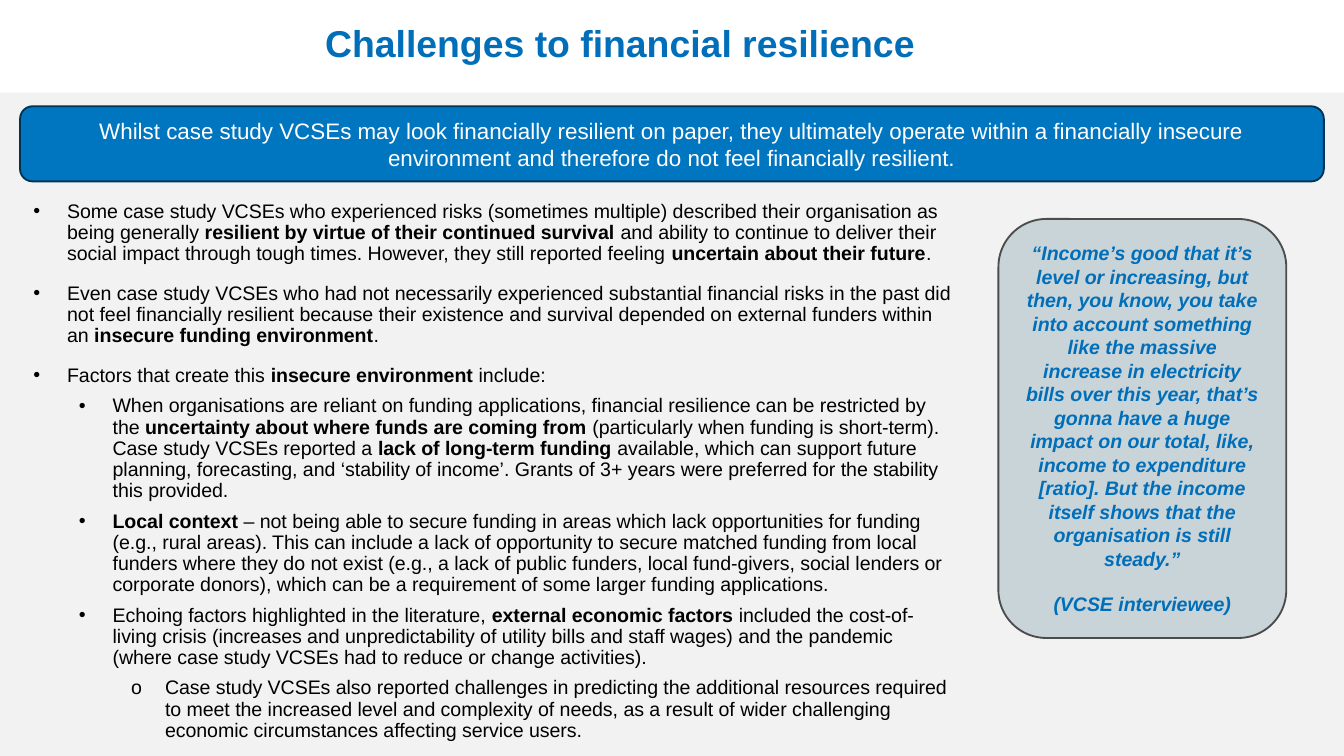
from pptx import Presentation
from pptx.util import Cm, Pt
from pptx.dml.color import RGBColor
from pptx.enum import shapes, text
from pptx.oxml.ns import qn
from lxml import etree

# Content: ** switches bold on and off
TITLE = "Challenges to financial resilience"
BANNER = ("Whilst case study VCSEs may look financially resilient on paper, they ultimately operate "
          "within a financially insecure environment and therefore do not feel financially resilient.")
POINTS = [  # level, text
    (0, "Some case study VCSEs who experienced risks (sometimes multiple) described their organisation "
        "as being generally **resilient by virtue of their continued survival **and ability to continue "
        "to deliver their social impact through tough times. However, they still reported feeling "
        "**uncertain about their future**."),
    (0, "Even case study VCSEs who had not necessarily experienced substantial financial risks in the "
        "past did not feel financially resilient because their existence and survival depended on "
        "external funders within an **insecure funding environment**."),
    (0, "Factors that create this **insecure environment **include:"),
    (1, "When organisations are reliant on funding applications, financial resilience can be restricted "
        "by the **uncertainty about where funds are coming from **(particularly when funding is "
        "short-term). Case study VCSEs reported a **lack of long-term funding **available, which can "
        "support future planning, forecasting, and ‘stability of income’. Grants of 3+ years were "
        "preferred for the stability this provided."),
    (1, "**Local context **– not being able to secure funding in areas which lack opportunities for "
        "funding (e.g., rural areas). This can include a lack of opportunity to secure matched funding "
        "from local funders where they do not exist (e.g., a lack of public funders, local fund-givers, "
        "social lenders or corporate donors), which can be a requirement of some larger funding "
        "applications."),
    (1, "Echoing factors highlighted in the literature, **external economic factors **included the "
        "cost-of-living crisis (increases and unpredictability of utility bills and staff wages) and "
        "the pandemic (where case study VCSEs had to reduce or change activities)."),
    (2, "Case study VCSEs also reported challenges in predicting the additional resources required to "
        "meet the increased level and complexity of needs, as a result of wider challenging economic "
        "circumstances affecting service users."),
]
QUOTE = [
    "“Income’s good that it’s level or increasing, but then, you know, you take into account something "
    "like the massive increase in electricity bills over this year, that’s gonna have a huge impact on "
    "our total, like, income to expenditure [ratio]. But the income itself shows that the organisation "
    "is still steady.”",
    "(VCSE interviewee)",
]

THEME = {
    "font": "Arial",
    "panel": "F2F2F2", "banner": "0076C0", "edge": "003454",
    "card": "C9D4D9", "rim": "4C4C4C",
    "blue": "006EB8", "white": "FFFFFF", "black": "000000",
    "title": 20, "lead": 12, "body": 10.5,
}
LEVELS = [  # indent in cm, space before in pt, bullet
    (0.64, 10, "•"), (1.5, 5, "•"), (2.49, 5, "o"),
]
HANG = 0.64
WIDE, HIGH = 25.4, 14.29
TOP = 1.75   # where the grey panel starts
EDGE = 0.38  # side margin
PLACES = {  # left, top, width, height in cm
    "panel": (0, TOP, WIDE, HIGH - TOP),
    "title": (5.89, 0.15, 19.51, 1.42),
    "banner": (EDGE, 2.01, WIDE - 2 * EDGE, 1.42),
    "body": (EDGE, 3.68, 17.93, 10.46),
    "card": (18.87, 4.14, 5.44, 7.92),
}


def color(name):
    return RGBColor.from_string(THEME[name])


def put(obj, **vals):
    for key, val in vals.items():
        setattr(obj, key, val)


def place(name):
    return [Cm(v) for v in PLACES[name]]


def style(run, size, tint, bold=False, italic=False):
    put(run.font, name=THEME["font"], size=Pt(THEME[size]), bold=bold, italic=italic)
    run.font.color.rgb = color(tint)


def block(slide, kind, name, line=None):
    box = slide.shapes.add_shape(kind, *place(name))
    box.shadow.inherit = False
    box.fill.solid()
    box.fill.fore_color.rgb = color(name)
    if line:
        box.line.color.rgb = color(line)
        box.line.width = Pt(1)
    else:
        box.line.fill.background()
    put(box.text_frame, word_wrap=True, vertical_anchor=text.MSO_ANCHOR.MIDDLE)
    return box


def centre(box, lines, size, tint, gap=0, **face):
    frame = box.text_frame
    for i, line in enumerate(lines):
        para = frame.add_paragraph() if i else frame.paragraphs[0]
        put(para, alignment=text.PP_ALIGN.CENTER, space_before=Pt(gap if i else 0),
            space_after=Pt(gap))
        run = para.add_run()
        run.text = line
        style(run, size, tint, **face)


def bullet(para, level):
    left, gap, mark = LEVELS[level]
    props = para._p.get_or_add_pPr()
    props.set("marL", str(Cm(left)))
    props.set("indent", str(-Cm(HANG)))
    etree.SubElement(props, qn("a:buFont")).set("typeface", THEME["font"])
    etree.SubElement(props, qn("a:buChar")).set("char", mark)
    put(para, level=level, line_spacing=0.9, space_before=Pt(gap))


deck = Presentation()
put(deck, slide_width=Cm(WIDE), slide_height=Cm(HIGH))
slide = deck.slides.add_slide(deck.slide_layouts[5])

# Grey panel
block(slide, shapes.MSO_SHAPE.RECTANGLE, "panel")

# Bulleted text
body = slide.shapes.add_textbox(*place("body")).text_frame
body.word_wrap = True
for i, (level, words) in enumerate(POINTS):
    para = body.add_paragraph() if i else body.paragraphs[0]
    bullet(para, level)
    if not i:
        para.space_before = Pt(0)
    for j, part in enumerate(words.split("**")):
        if part:
            run = para.add_run()
            run.text = part
            style(run, "body", "black", bold=j % 2 == 1)

# Banner and quote card
ROUND = shapes.MSO_SHAPE.ROUNDED_RECTANGLE
centre(block(slide, ROUND, "banner", "edge"), [BANNER], "lead", "white")
centre(block(slide, ROUND, "card", "rim"), QUOTE, "body", "blue", gap=6, bold=True, italic=True)

# Title
title = slide.shapes.title
put(title, **dict(zip(("left", "top", "width", "height"), place("title"))))
put(title.text_frame, text=TITLE, word_wrap=True, vertical_anchor=text.MSO_ANCHOR.MIDDLE)
para = title.text_frame.paragraphs[0]
put(para, alignment=text.PP_ALIGN.LEFT, line_spacing=0.9)
style(para.runs[0], "title", "blue", bold=True)

deck.save("out.pptx")
